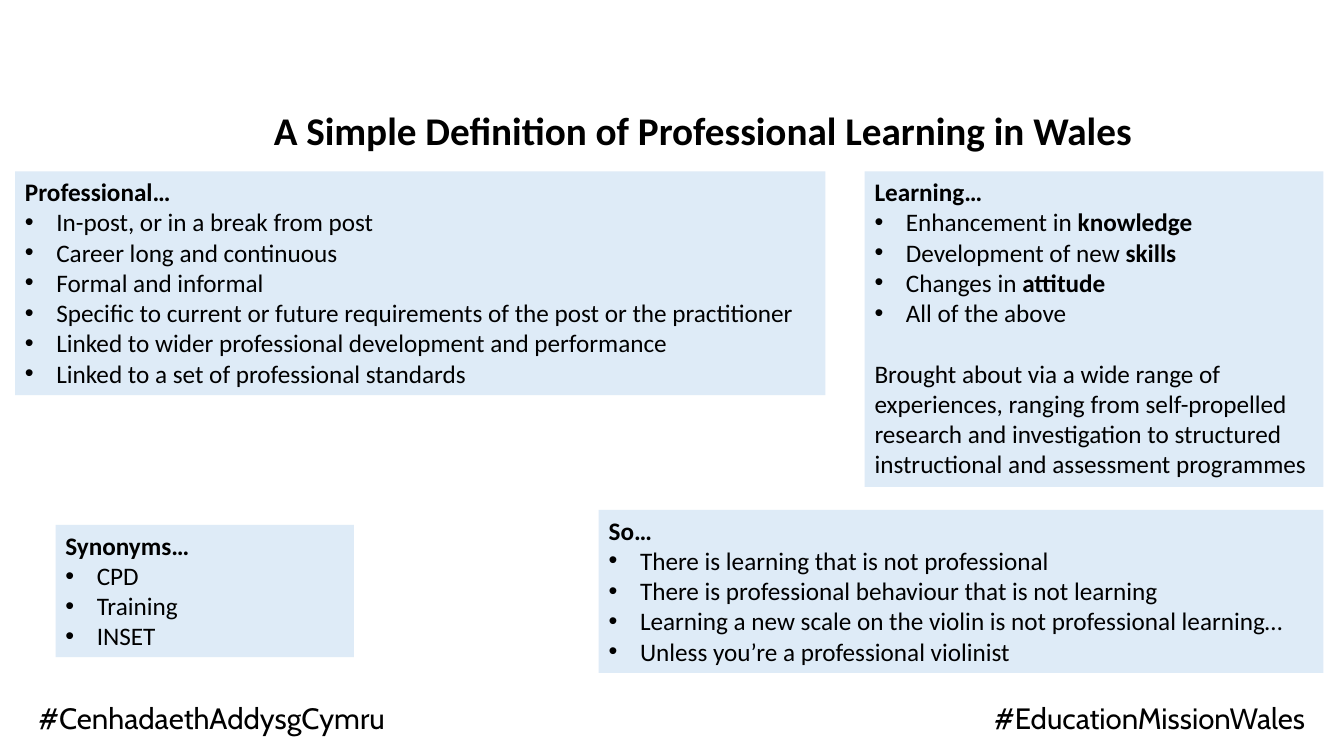
from lxml import etree
from pptx import Presentation
from pptx.dml.color import RGBColor
from pptx.enum.shapes import MSO_SHAPE
from pptx.enum.text import MSO_ANCHOR, PP_ALIGN
from pptx.oxml.ns import qn
from pptx.util import Cm, Pt

RECTANGLE = MSO_SHAPE.RECTANGLE
TOP = MSO_ANCHOR.TOP
LEFT, RIGHT = PP_ALIGN.LEFT, PP_ALIGN.RIGHT
BLACK = RGBColor(0x00, 0x00, 0x00)
PALE_BLUE = RGBColor(0xDE, 0xEB, 0xF7)
BODY_FONT, HASHTAG_FONT = "Calibri", "Cabin"
BODY_SIZE = 18
BULLET_INDENT = Cm(0.79)
PANEL_TOP, PANEL_RIGHT = 4.32, 33.35
HASHTAG_WIDTH, HASHTAG_HEIGHT = 13.03, 1.09

PROFESSIONAL = [
    "In-post, or in a break from post",
    "Career long and continuous",
    "Formal and informal",
    "Specific to current or future requirements of the post or the practitioner",
    "Linked to wider professional development and performance",
    "Linked to a set of professional standards",
]
LEARNING = [
    ("Enhancement in ", "knowledge"),
    ("Development of new ", "skills"),
    ("Changes in ", "attitude"),
    "All of the above",
]
LEARNING_CLOSING = (
    "Brought about via a wide range of experiences, ranging from self-propelled "
    "research and investigation to structured instructional and assessment programmes"
)
SYNONYMS = ["CPD", "Training", "INSET"]
CONCLUSIONS = [
    "There is learning that is not professional",
    "There is professional behaviour that is not learning",
    "Learning a new scale on the violin is not professional learning…",
    "Unless you’re a professional violinist",
]


def style_paragraph(paragraph, size=BODY_SIZE, name=BODY_FONT, bold=False):
    """Set the font of a whole paragraph."""
    font = paragraph.font
    font.size = Pt(size)
    font.name = name
    font.bold = bold
    font.color.rgb = BLACK


def add_bullet(paragraph):
    """Give a paragraph a round bullet with a hanging indent."""
    properties = paragraph._p.get_or_add_pPr()
    properties.set("marL", str(BULLET_INDENT))
    properties.set("indent", str(-BULLET_INDENT))
    etree.SubElement(properties, qn("a:buFont")).set("typeface", "Arial")
    etree.SubElement(properties, qn("a:buChar")).set("char", "•")


def add_panel(slide, box, heading, items, closing=None):
    """Place a pale panel with a bold heading, bullets and an optional closing text."""
    shape = slide.shapes.add_shape(RECTANGLE, *map(Cm, box))
    shape.shadow.inherit = False
    shape.fill.solid()
    shape.fill.fore_color.rgb = PALE_BLUE
    shape.line.fill.background()
    frame = shape.text_frame
    frame.word_wrap = True
    frame.vertical_anchor = TOP
    paragraph = frame.paragraphs[0]
    paragraph.text = heading
    paragraph.alignment = LEFT
    style_paragraph(paragraph, bold=True)
    for item in items:
        paragraph = frame.add_paragraph()
        paragraph.alignment = LEFT
        add_bullet(paragraph)
        style_paragraph(paragraph)
        if isinstance(item, str):
            paragraph.text = item
        else:
            lead, keyword = item
            paragraph.add_run().text = lead
            run = paragraph.add_run()
            run.text = keyword
            run.font.bold = True
    if closing:
        paragraph = frame.add_paragraph()
        paragraph.text = closing
        paragraph.alignment = LEFT
        paragraph.space_before = Pt(21.6)
        style_paragraph(paragraph)


def add_label(slide, box, text, size, name, bold=False, alignment=LEFT, margins=(0.25, 0.13)):
    """Place a single line of text in a box."""
    frame = slide.shapes.add_textbox(*map(Cm, box)).text_frame
    frame.word_wrap = True
    frame.margin_left = frame.margin_right = Cm(margins[0])
    frame.margin_top = frame.margin_bottom = Cm(margins[1])
    paragraph = frame.paragraphs[0]
    paragraph.text = text
    paragraph.alignment = alignment
    style_paragraph(paragraph, size, name, bold)


def add_hashtag(slide, left, top, text, alignment):
    """Place a campaign hashtag at the foot of the slide."""
    box = (left, top, HASHTAG_WIDTH, HASHTAG_HEIGHT)
    add_label(slide, box, text, 21, HASHTAG_FONT, alignment=alignment, margins=(0.18, 0.1))


def build_definition_slide(presentation):
    """Add the slide that defines professional learning."""
    slide = presentation.slides.add_slide(presentation.slide_layouts[6])
    add_label(slide, (6.65, 2.54, 22.43, 1.45),
              "A Simple Definition of Professional Learning in Wales", 28, BODY_FONT, bold=True)
    add_panel(slide, (0.38, PANEL_TOP, 20.42, 5.64), "Professional…", PROFESSIONAL)
    learning_left, conclusions_left = 21.79, 15.09
    add_panel(slide, (learning_left, PANEL_TOP, PANEL_RIGHT - learning_left, 7.95),
              "Learning…", LEARNING, LEARNING_CLOSING)
    add_panel(slide, (1.4, 13.23, 7.52, 3.33), "Synonyms…", SYNONYMS)
    add_panel(slide, (conclusions_left, 12.85, PANEL_RIGHT - conclusions_left, 4.11),
              "So…", CONCLUSIONS)
    add_hashtag(slide, 0.79, 17.55, "#CenhadaethAddysgCymru", LEFT)
    add_hashtag(slide, 20.04, 17.53, "#EducationMissionWales", RIGHT)


def main():
    """Build and save the presentation."""
    presentation = Presentation()
    presentation.slide_width = Cm(33.87)
    presentation.slide_height = Cm(19.05)
    build_definition_slide(presentation)
    presentation.save("out.pptx")


if __name__ == "__main__":
    main()
